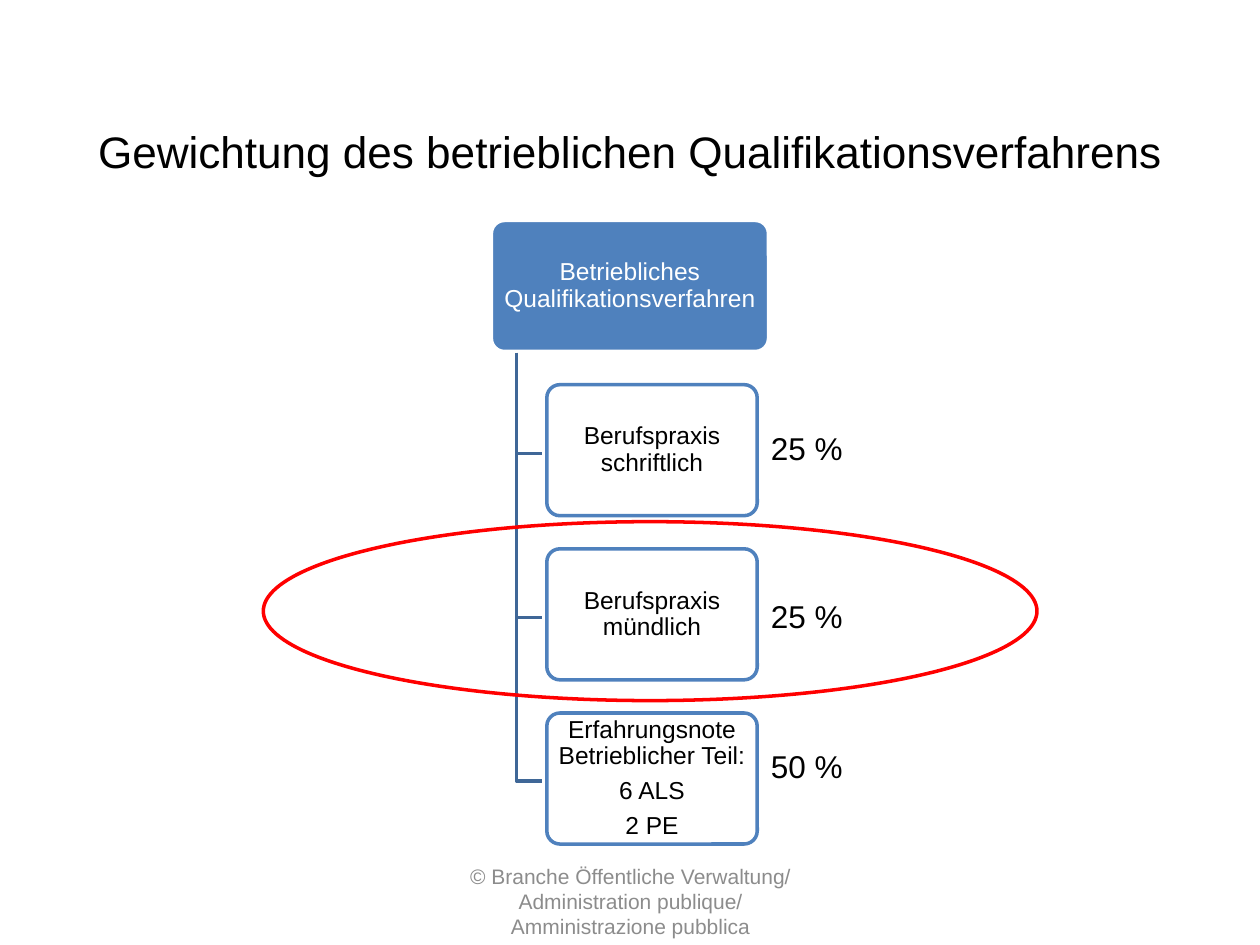
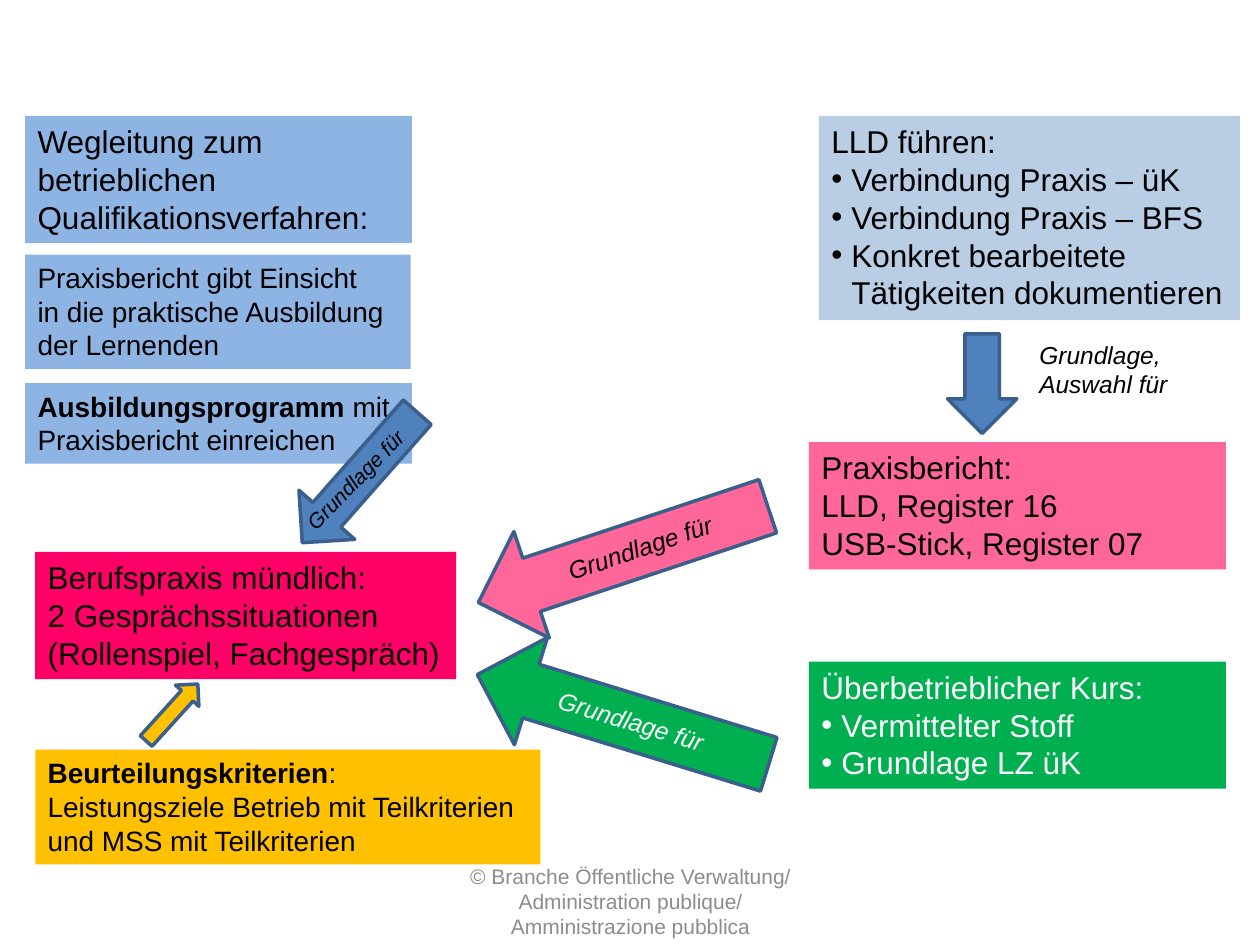
from dataclasses import dataclass

from lxml.etree import SubElement
from pptx import Presentation
from pptx.dml.color import RGBColor
from pptx.enum.shapes import MSO_SHAPE as Preset
from pptx.enum.text import MSO_ANCHOR as Anchor, PP_ALIGN as Align
from pptx.oxml.ns import qn
from pptx.util import Emu, Inches, Pt

COLUMNS, ROWS = 100, 75
CELL = Inches(0.1)  # side of one square grid cell
HANGING = Inches(0.16)


@dataclass(frozen=True)
class Theme:
    font: str = "Arial"
    black: str = "000000"
    white: str = "FFFFFF"
    gray: str = "8C8C8C"
    blue: str = "4F81BD"
    branch: str = "3F6797"
    arrow_edge: str = "3A5F8C"
    sky: str = "8EB4E3"
    pale: str = "B9CDE5"
    pink: str = "FF6699"
    magenta: str = "FF0066"
    green: str = "00B050"
    amber: str = "FFC000"
    red: str = "FF0000"
    title: float = 25.2
    large: float = 18
    medium: float = 16
    small: float = 14
    tiny: float = 12
    stroke: float = 2


THEME = Theme()


@dataclass(frozen=True)
class Line:
    """One paragraph with an optional bold lead, bullet or plain indent."""
    text: str
    lead: str = ""
    bullet: bool = False
    indented: bool = False


def grid(*cells):
    return [Emu(round(cell * CELL)) for cell in cells]


def color(code):
    return RGBColor.from_string(code)


def write(box, lines, size=THEME.large, ink=THEME.black, italic=False,
          align=Align.LEFT, anchor=Anchor.TOP, wrap=True, inset=None,
          spacing=None, after=None):
    frame = box.text_frame
    frame.word_wrap = wrap
    frame.vertical_anchor = anchor
    if inset is not None:
        frame.margin_left = frame.margin_right = Inches(inset)
        frame.margin_top = frame.margin_bottom = Inches(inset)
    for index, line in enumerate(lines):
        if isinstance(line, str):
            line = Line(line)
        para = frame.paragraphs[0] if index == 0 else frame.add_paragraph()
        hang(para, line)
        para.alignment = align
        if spacing:
            para.line_spacing = spacing
        if after:
            para.space_after = Pt(after)
        for text, bold in ((line.lead, True), (line.text, False)):
            if text:
                span = para.add_run()
                span.text = text
                font = span.font
                font.name, font.size = THEME.font, Pt(size)
                font.bold, font.italic = bold, italic
                font.color.rgb = color(ink)


def hang(para, line):
    """Set the indent and bullet of a list line."""
    if line.bullet or line.indented:
        properties = para._p.get_or_add_pPr()
        properties.set("marL", str(HANGING))
        properties.set("indent", str(-HANGING if line.bullet else 0))
        if line.bullet:
            SubElement(properties, qn("a:buFont"), typeface=THEME.font)
            SubElement(properties, qn("a:buChar"), char="•")


def add_text(page, place, lines, fill=None, turn=0, **format):
    box = page.shapes.add_textbox(*grid(*place))
    box.rotation = turn
    if fill:
        box.fill.solid()
        box.fill.fore_color.rgb = color(fill)
    write(box, lines, **format)


def paint(shape, fill, edge):
    shape.shadow.inherit = False
    if fill:
        shape.fill.solid()
        shape.fill.fore_color.rgb = color(fill)
    else:
        shape.fill.background()
    shape.line.color.rgb = color(edge)
    shape.line.width = Pt(THEME.stroke)


def add_preset(page, preset, place, fill, edge, turn=0):
    shape = page.shapes.add_shape(preset, *grid(*place))
    shape.rotation = turn
    paint(shape, fill, edge)
    return shape


def add_card(page, place, lines, fill, edge, ink):
    card = add_preset(page, Preset.ROUNDED_RECTANGLE, place, fill, edge)
    card.adjustments[0] = 0.1
    write(card, lines, size=THEME.small, ink=ink, align=Align.CENTER,
          anchor=Anchor.MIDDLE, inset=0.03, spacing=0.9, after=4.9)


def add_branch(page, left, top, right, bottom):
    """Draw a line down from the root and then across to a card."""
    outline = page.shapes.build_freeform(left, top, scale=CELL)
    outline.add_line_segments([(left, bottom), (right, bottom)], close=False)
    paint(outline.convert_to_shape(), None, THEME.branch)


def add_arrow(page, place, fill, turn=0):
    add_preset(page, Preset.DOWN_ARROW, place, fill, THEME.arrow_edge, turn)


def add_page(deck):
    page = deck.slides.add_slide(deck.slide_layouts[6])
    add_text(page, (34.2, 69.5, 31.7, 4),
             ["© Branche Öffentliche Verwaltung/ Administration publique/ "
              "Amministrazione pubblica"],
             size=THEME.tiny, ink=THEME.gray, align=Align.CENTER,
             anchor=Anchor.MIDDLE)
    return page


def build_weighting(deck):
    page = add_page(deck)
    add_text(page, (5, 8.4, 90, 7.1),
             ["Gewichtung des betrieblichen Qualifikationsverfahrens"],
             size=THEME.title, align=Align.CENTER, anchor=Anchor.MIDDLE)
    top, height, pitch = 17.5, 10.4, 13.03
    trunk, card_left = 41.2, 43.4
    add_card(page, (39, top, 22, height),
             ["Betriebliches Qualifikationsverfahren"],
             THEME.blue, THEME.white, THEME.white)
    parts = [
        (["Berufspraxis schriftlich"], "25 %", 33.6),
        (["Berufspraxis mündlich"], "25 %", 46.9),
        (["Erfahrungsnote Betrieblicher Teil:", "6 ALS", "2 PE"],
         "50 %", 58.8),
    ]
    for step, (lines, weight, weight_top) in enumerate(parts, start=1):
        card_top = top + step * pitch
        add_branch(page, trunk, top + height, card_left,
                   card_top + height / 2)
        add_card(page, (card_left, card_top, 16.7, height), lines,
                 THEME.white, THEME.blue, THEME.black)
        add_text(page, (60.2, weight_top, 7.8, 4), [weight], wrap=False)
    add_preset(page, Preset.OVAL, (20.9, 41.4, 61.4, 14.2), None, THEME.red)


def build_foundations(deck):
    page = add_page(deck)
    panels = [
        ((2, 9.2, 30.7, 10.1), THEME.sky, THEME.large, THEME.black,
         ["Wegleitung zum", "betrieblichen", "Qualifikationsverfahren:"]),
        ((2, 20.2, 30.6, 9.1), THEME.sky, THEME.medium, THEME.black,
         ["Praxisbericht gibt Einsicht", "in die praktische Ausbildung",
          "der Lernenden"]),
        ((2, 30.4, 30.7, 6.4), THEME.sky, THEME.medium, THEME.black,
         [Line(" mit", lead="Ausbildungsprogramm"),
          "Praxisbericht einreichen"]),
        ((65, 9.2, 33.4, 16.2), THEME.pale, THEME.large, THEME.black,
         ["LLD führen:", Line("Verbindung Praxis – üK", bullet=True),
          Line("Verbindung Praxis – BFS", bullet=True),
          Line("Konkret bearbeitete", bullet=True),
          Line("Tätigkeiten dokumentieren", indented=True)]),
        ((64.2, 35.1, 33.1, 10.1), THEME.pink, THEME.large, THEME.black,
         ["Praxisbericht:", "LLD, Register 16", "USB-Stick, Register 07"]),
        ((64.2, 52.5, 33.1, 10.1), THEME.green, THEME.large, THEME.white,
         ["Überbetrieblicher Kurs:", Line("Vermittelter Stoff", bullet=True),
          Line("Grundlage LZ üK", bullet=True)]),
        ((2.8, 43.8, 33.4, 10.1), THEME.magenta, THEME.large, THEME.black,
         ["Berufspraxis mündlich:", "2 Gesprächssituationen",
          "(Rollenspiel, Fachgespräch)"]),
        ((2.8, 59.5, 40.1, 9.1), THEME.amber, THEME.medium, THEME.black,
         [Line(":", lead="Beurteilungskriterien"),
          "Leistungsziele Betrieb mit Teilkriterien",
          "und MSS mit Teilkriterien"]),
    ]
    for place, fill, size, ink, lines in panels:
        add_text(page, place, lines, fill=fill, size=size, ink=ink)

    arrows = [
        ((75.2, 26.5, 5.5, 7.9), THEME.blue, 0),
        ((45, 31.9, 8.9, 24.2), THEME.pink, 71.6),
        ((45, 45, 8.9, 24.2), THEME.green, 107.1),
        ((12.4, 53.5, 2.5, 6.1), THEME.amber, 222.2),
        ((25.6, 31, 5.9, 13.8), THEME.blue, 41.4),
    ]
    for place, fill, turn in arrows:
        add_arrow(page, place, fill, turn)

    add_text(page, (81.5, 26.5, 12.3, 5.7), ["Grundlage,", "Auswahl für"],
             size=THEME.small, italic=True, wrap=False)
    labels = [
        ((43.8, 41.5, 15.7, 3.4), 341.4, THEME.small, THEME.black),
        ((43.1, 55.8, 15.7, 3.4), 16.9, THEME.small, THEME.white),
        ((22, 36.3, 12.9, 3), 314.4, THEME.tiny, THEME.black),
    ]
    for place, turn, size, ink in labels:
        add_text(page, place, ["Grundlage für"], turn=turn, size=size,
                 ink=ink, italic=True)


def main():
    deck = Presentation()
    deck.slide_width, deck.slide_height = grid(COLUMNS, ROWS)
    build_weighting(deck)
    build_foundations(deck)
    deck.save("out.pptx")


if __name__ == "__main__":
    main()
